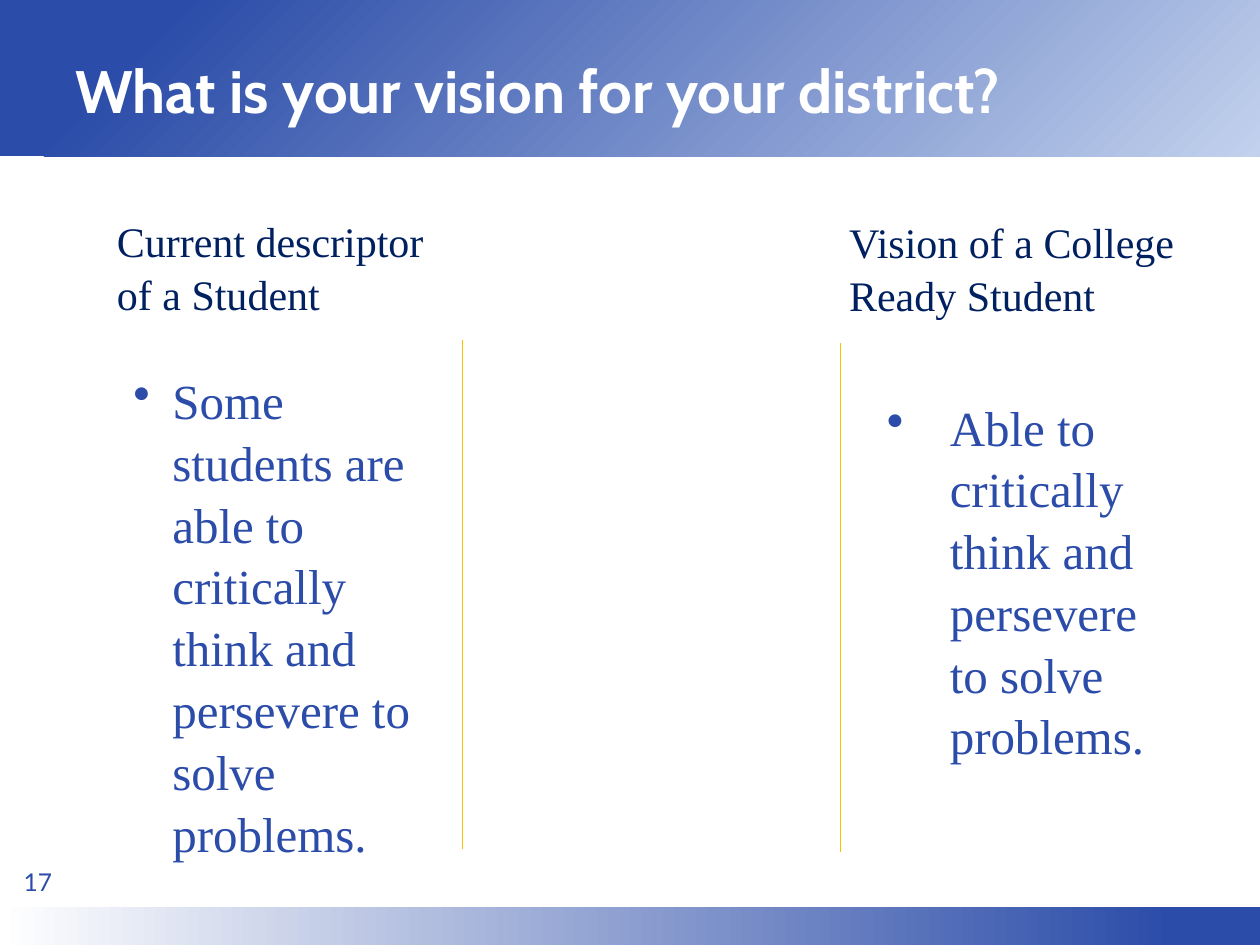
import dataclasses

import lxml.etree
import pptx
import pptx.dml.color
import pptx.enum.shapes
import pptx.enum.text
import pptx.oxml.ns
import pptx.util


@dataclasses.dataclass(frozen=True)
class Theme:
    """Colours, fonts and type sizes of the deck."""

    blue: str = "2B4CA8"
    pale: str = "C2D1ED"
    white: str = "FFFFFF"
    navy: str = "002060"
    gold: str = "FFC000"
    title_font: str = "Cabin"
    number_font: str = "Lato"
    body_font: str = "Times New Roman"
    title_size: float = 34.2
    body_size: float = 28
    heading_size: float = 24
    number_size: float = 14
    rule_width: float = 0.75
    spacing: float = 1.05


THEME = Theme()
WIDTH, HEIGHT = 10, 7.5


def inches(*lengths):
    """Turn lengths in inches into slide units."""
    return [pptx.util.Inches(length) for length in lengths]


def colour(code):
    """Return the colour for a hexadecimal code."""
    return pptx.dml.color.RGBColor.from_string(code)


def add_band(page, box, stops, angle):
    """Add a gradient band whose stops are (share, colour) pairs."""
    band = page.shapes.add_shape(pptx.enum.shapes.MSO_SHAPE.RECTANGLE, *inches(*box))
    band.shadow.inherit = False
    band.line.fill.background()
    band.fill.gradient()
    band.fill.gradient_angle = angle
    for stop, (share, code) in zip(band.fill.gradient_stops, stops):
        stop.position = share
        stop.color.rgb = colour(code)


def add_text(page, box, text, font, size, code, bold=False, middle=False):
    """Add a wrapped text box and return its paragraph."""
    frame = page.shapes.add_textbox(*inches(*box)).text_frame
    frame.word_wrap = True
    anchor = pptx.enum.text.MSO_ANCHOR
    frame.vertical_anchor = anchor.MIDDLE if middle else anchor.TOP
    frame.text = text
    para = frame.paragraphs[0]
    for span in para.runs:
        span.font.name = font
        span.font.size = pptx.util.Pt(size)
        span.font.bold = bold
        span.font.color.rgb = colour(code)
    return para


def add_bullet(para, indent):
    """Give a paragraph a round bullet with a hanging indent."""
    settings = para._p.get_or_add_pPr()
    settings.set("marL", str(pptx.util.Inches(indent)))
    settings.set("indent", str(-pptx.util.Inches(indent)))
    mark = lxml.etree.SubElement(settings, pptx.oxml.ns.qn("a:buChar"))
    mark.set("char", "•")


def add_rule(page, left, top, height):
    """Add a thin vertical divider."""
    rule = page.shapes.add_connector(
        pptx.enum.shapes.MSO_CONNECTOR.STRAIGHT, *inches(left, top, left, top + height)
    )
    rule.line.color.rgb = colour(THEME.gold)
    rule.line.width = pptx.util.Pt(THEME.rule_width)
    lxml.etree.SubElement(rule._element.spPr, pptx.oxml.ns.qn("a:effectLst"))


def add_header(page, box, title):
    """Add the header band and its title."""
    left, top, width, height = box
    add_band(page, box, [(0.13, THEME.blue), (1, THEME.pale)], 315)
    title_box = (left + 0.05 * width, top + 0.33, 0.9 * width, 0.62 * height)
    add_text(page, title_box, title, THEME.title_font, THEME.title_size,
             THEME.white, bold=True, middle=True)


def add_footer(page, box, number):
    """Add the footer band with the page number above it."""
    left, top, width, height = box
    add_band(page, box, [(0.07, THEME.blue), (1, THEME.white)], 180)
    add_text(page, (left + 0.09, top - 0.4, 2.33, 0.4), number, THEME.number_font,
             THEME.number_size, THEME.blue, middle=True)


def add_column(page, box, heading, body, body_box, indent):
    """Add a heading and, offset from it, a bulleted description."""
    left, top, width, height = box
    head = add_text(page, box, heading, THEME.body_font, THEME.heading_size, THEME.navy)
    right, down, body_width, body_height = body_box
    point = add_text(page, (left + right, top + down, body_width, body_height), body,
                     THEME.body_font, THEME.body_size, THEME.blue)
    for para in (head, point):
        para.line_spacing = THEME.spacing
    add_bullet(point, indent)


def main():
    """Build and save the deck."""
    deck = pptx.Presentation()
    deck.slide_width, deck.slide_height = inches(WIDTH, HEIGHT)
    page = deck.slides.add_slide(deck.slide_layouts[6])
    add_footer(page, (0, 0.96 * HEIGHT, WIDTH, 0.04 * HEIGHT), "17")
    add_header(page, (0, 0, WIDTH, 1.24), "What is your vision for your district?")
    for left, top in ((3.67, 2.7), (6.67, 2.72)):
        add_rule(page, left, top, 4.04)
    add_column(
        page, (0.83, 1.64, 2.83, 0.91), "Current descriptor of a Student",
        "Some students are able to critically think and persevere to solve problems.",
        (0.13, 1.23, 2.58, 3.87), 0.31,
    )
    add_column(
        page, (6.64, 1.65, 3.08, 0.91), "Vision of a College Ready Student",
        "Able to critically think and persevere to solve problems.",
        (0.3, 1.43, 2.5, 2.93), 0.5,
    )
    deck.save("out.pptx")


if __name__ == "__main__":
    main()
